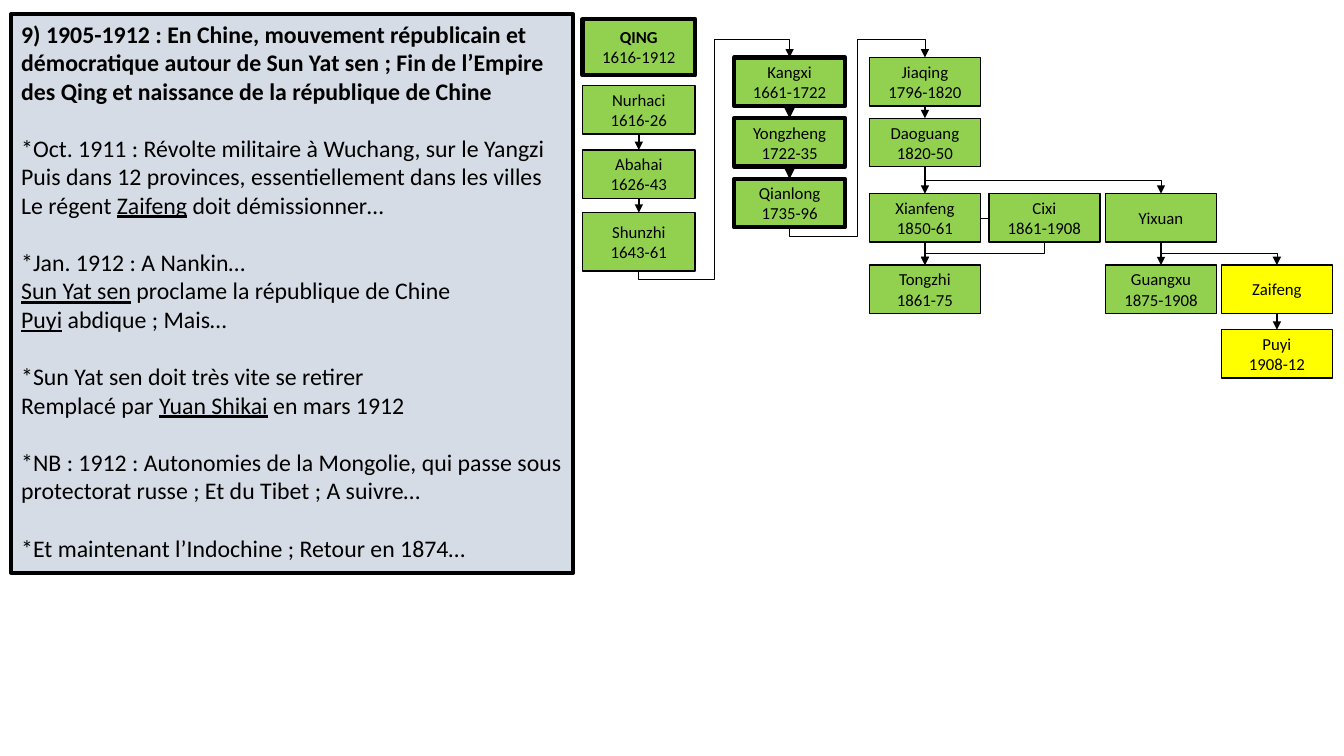
"""Build the slide on the end of the Qing empire, with its dynastic family tree."""
from dataclasses import dataclass

from lxml import etree
from pptx import Presentation
from pptx.dml.color import RGBColor
from pptx.enum.shapes import MSO_CONNECTOR, MSO_SHAPE
from pptx.enum.text import MSO_ANCHOR, MSO_AUTO_SIZE, PP_ALIGN
from pptx.oxml.ns import qn
from pptx.util import Cm, Pt

STRAIGHT, ELBOW = MSO_CONNECTOR.STRAIGHT, MSO_CONNECTOR.ELBOW
RECTANGLE = MSO_SHAPE.RECTANGLE
TOP, MIDDLE = MSO_ANCHOR.TOP, MSO_ANCHOR.MIDDLE
LEFT, CENTER = PP_ALIGN.LEFT, PP_ALIGN.CENTER
NO_AUTOFIT = MSO_AUTO_SIZE.NONE


@dataclass(frozen=True)
class Theme:
    """Colours, font and sizes of the slide."""
    ink: RGBColor = RGBColor(0, 0, 0)
    panel: RGBColor = RGBColor(0xD6, 0xDC, 0xE5)
    green: RGBColor = RGBColor(0x92, 0xD0, 0x50)
    yellow: RGBColor = RGBColor(0xFF, 0xFF, 0x00)
    font: str = "Calibri"
    text: Pt = Pt(17)
    label: Pt = Pt(12)
    gap: Pt = Pt(20.4)
    thin: Pt = Pt(0.5)
    normal: Pt = Pt(1)
    thick: Pt = Pt(3)


theme = Theme()


def add_span(para, text, size, bold=False, underline=False):
    """Add one formatted run to a paragraph."""
    span = para.add_run()
    span.text = text
    span.font.name = theme.font
    span.font.size = size
    span.font.bold = bold
    span.font.underline = underline
    span.font.color.rgb = theme.ink


def paint(box, fill, weight):
    """Give a box its fill and black outline."""
    box.fill.solid()
    box.fill.fore_color.rgb = fill
    box.line.color.rgb = theme.ink
    box.line.width = weight


deck = Presentation()
deck.slide_width, deck.slide_height = Cm(33.87), Cm(19.05)
page = deck.slides.add_slide(deck.slide_layouts[1])

title, panel = page.shapes.title, page.placeholders[1]
for holder, height in ((title, 2.45), (panel, 14.07)):
    holder.left, holder.top = Cm(0.28), Cm(0.36)
    holder.width, holder.height = Cm(14.17), Cm(height)
    frame = holder.text_frame
    frame.word_wrap = True
    frame.auto_size = NO_AUTOFIT
    frame.vertical_anchor = TOP
paint(panel, theme.panel, theme.thick)
panel.text_frame.margin_top = Cm(3)
panel.element.addnext(title.element)

heading = title.text_frame.paragraphs[0]
heading.alignment = LEFT
add_span(heading, "9) 1905-1912 : En Chine, mouvement républicain et démocratique "
         "autour de Sun Yat sen ; Fin de l’Empire des Qing et naissance de la "
         "république de Chine", theme.text, bold=True)

NAMES = ("Zaifeng", "Sun Yat sen", "Puyi", "Yuan Shikai")
sections = [
    [("*Oct. 1911 : Révolte militaire à Wuchang, sur le Yangzi",),
     ("Puis dans 12 provinces, essentiellement dans les villes",),
     ("Le régent ", "Zaifeng", " doit démissionner…")],
    [("*Jan. 1912 : A Nankin…",),
     ("Sun Yat sen", " proclame la république de Chine"),
     ("Puyi", " abdique ; Mais…")],
    [("*Sun Yat sen doit très vite se retirer",),
     ("Remplacé par ", "Yuan Shikai", " en mars 1912")],
    [("*NB : 1912 : Autonomies de la Mongolie, qui passe sous protectorat "
      "russe ; Et du Tibet ; A suivre…",)],
    [("*Et maintenant l’Indochine ; Retour en 1874…",)],
]
para = panel.text_frame.paragraphs[0]
for section_index, section in enumerate(sections):
    for line_index, pieces in enumerate(section):
        if section_index or line_index:
            para = panel.text_frame.add_paragraph()
        properties = para._p.get_or_add_pPr()
        properties.set("marL", "0")
        properties.set("indent", "0")
        etree.SubElement(properties, qn("a:buNone"))
        para.space_before = theme.gap if section_index and not line_index else Pt(0)
        for piece in pieces:
            add_span(para, piece, theme.text, underline=piece in NAMES)

FOUNDERS, HEYDAY, DECLINE, REGENT, BROTHER, LAST = 14.68, 18.5, 21.91, 24.92, 27.86, 30.78
ROW_1, ROW_2, ROW_3 = (1.45 + 1.53 * row for row in range(3))
FAMILY, HEIRS, END = 4.88, 6.68, 8.31
WIDE, NARROW, LOW = 2.84, 2.8, 1.22
rulers = [
    ("QING", "1616-1912", FOUNDERS, 0.48, WIDE, 1.42, theme.thick, theme.green),
    ("Nurhaci", "1616-26", FOUNDERS, 2.16, WIDE, LOW, theme.normal, theme.green),
    ("Abahai", "1626-43", FOUNDERS, 3.78, WIDE, LOW, theme.normal, theme.green),
    ("Shunzhi", "1643-61", FOUNDERS, 5.36, WIDE, 1.47, theme.normal, theme.green),
    ("Kangxi", "1661-1722", HEYDAY, ROW_1, NARROW, LOW, theme.thick, theme.green),
    ("Yongzheng", "1722-35", HEYDAY, ROW_2, NARROW, LOW, theme.thick, theme.green),
    ("Qianlong", "1735-96", HEYDAY, ROW_3, NARROW, LOW, theme.thick, theme.green),
    ("Jiaqing", "1796-1820", DECLINE, ROW_1, NARROW, LOW, theme.normal, theme.green),
    ("Daoguang", "1820-50", DECLINE, ROW_2, NARROW, LOW, theme.normal, theme.green),
    ("Xianfeng", "1850-61", DECLINE, FAMILY, NARROW, LOW, theme.normal, theme.green),
    ("Cixi", "1861-1908", REGENT, FAMILY, NARROW, LOW, theme.normal, theme.green),
    ("Yixuan", "", BROTHER, FAMILY, NARROW, LOW, theme.normal, theme.green),
    ("Tongzhi", "1861-75", DECLINE, HEIRS, NARROW, LOW, theme.normal, theme.green),
    ("Guangxu", "1875-1908", BROTHER, HEIRS, NARROW, LOW, theme.normal, theme.green),
    ("Zaifeng", "", LAST, HEIRS, NARROW, LOW, theme.normal, theme.yellow),
    ("Puyi", "1908-12", LAST, END, NARROW, LOW, theme.normal, theme.yellow),
]
boxes = {}
for name, years, left, top, width, height, weight, fill in rulers:
    box = page.shapes.add_shape(RECTANGLE, Cm(left), Cm(top), Cm(width), Cm(height))
    box.shadow.inherit = False
    paint(box, fill, weight)
    frame = box.text_frame
    frame.word_wrap = True
    frame.vertical_anchor = MIDDLE
    para = frame.paragraphs[0]
    para.alignment = CENTER
    add_span(para, name, theme.label, bold=name == "QING")
    if years:
        para = frame.add_paragraph()
        para.alignment = CENTER
        add_span(para, years, theme.label)
    boxes[name] = box

SITE_TOP, SITE_LEFT, SITE_BOTTOM, SITE_RIGHT = range(4)
links = [
    ("Nurhaci", "Abahai", STRAIGHT, theme.normal),
    ("Abahai", "Shunzhi", STRAIGHT, theme.normal),
    ("Shunzhi", "Kangxi", ELBOW, theme.thin),
    ("Kangxi", "Yongzheng", STRAIGHT, theme.thick),
    ("Yongzheng", "Qianlong", STRAIGHT, theme.thick),
    ("Qianlong", "Jiaqing", ELBOW, theme.thin),
    ("Jiaqing", "Daoguang", STRAIGHT, theme.normal),
    ("Daoguang", "Xianfeng", STRAIGHT, theme.normal),
    ("Daoguang", "Yixuan", ELBOW, theme.thin),
    ("Xianfeng", "Cixi", STRAIGHT, theme.thin),
    ("Xianfeng", "Tongzhi", STRAIGHT, theme.normal),
    ("Cixi", "Tongzhi", ELBOW, theme.thin),
    ("Yixuan", "Guangxu", STRAIGHT, theme.normal),
    ("Yixuan", "Zaifeng", ELBOW, theme.thin),
    ("Zaifeng", "Puyi", STRAIGHT, theme.normal),
]
for parent, child, kind, weight in links:
    married = child == "Cixi"
    link = page.shapes.add_connector(kind, Cm(0), Cm(0), Cm(0), Cm(0))
    link.begin_connect(boxes[parent], SITE_RIGHT if married else SITE_BOTTOM)
    link.end_connect(boxes[child], SITE_LEFT if married else SITE_TOP)
    link.line.color.rgb = theme.ink
    link.line.width = weight
    properties = link.element.spPr
    etree.SubElement(properties, qn("a:effectLst"))
    if not married:
        etree.SubElement(properties.find(qn("a:ln")), qn("a:tailEnd"), type="triangle")
    if kind == ELBOW:
        across, down = link.end_x - link.begin_x, link.end_y - link.begin_y
        middle_x, middle_y = link.begin_x + across // 2, link.begin_y + down // 2
        link.begin_x, link.end_x = middle_x - down // 2, middle_x + down // 2
        link.begin_y, link.end_y = middle_y + across // 2, middle_y - across // 2
        properties.find(qn("a:xfrm")).set("rot", "5400000")
        if down < 0:
            outline = properties.find(qn("a:prstGeom"))
            outline.set("prst", "bentConnector5")
            guides = outline.find(qn("a:avLst"))
            bends = (Cm(0.22) / down, 0.5, 1 - Cm(0.45) / down)
            for number, bend in enumerate(bends, 1):
                etree.SubElement(guides, qn("a:gd"), name=f"adj{number}",
                                 fmla=f"val {round(bend * 100000)}")

deck.save("out.pptx")
